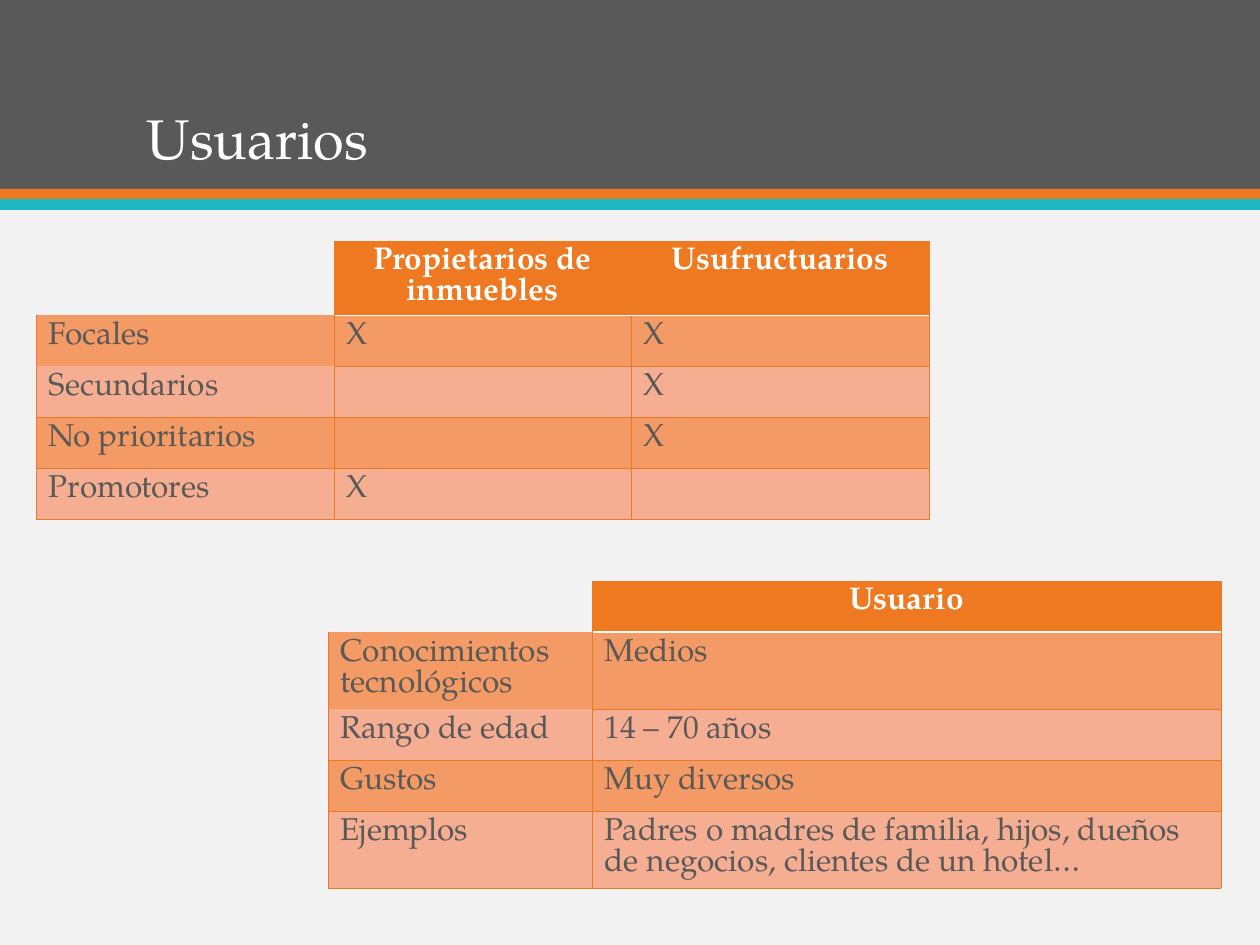
"""Build the "Usuarios" slide: a banded heading and two user tables."""
from lxml import etree
from pptx import Presentation
from pptx.dml.color import RGBColor
from pptx.enum.shapes import MSO_SHAPE
from pptx.enum.text import MSO_ANCHOR, MSO_AUTO_SIZE, PP_ALIGN
from pptx.oxml.ns import qn
from pptx.util import Emu, Pt

RECTANGLE = MSO_SHAPE.RECTANGLE
BOTTOM = MSO_ANCHOR.BOTTOM
NO_FIT = MSO_AUTO_SIZE.NONE
LEFT, CENTER = PP_ALIGN.LEFT, PP_ALIGN.CENTER

GRAY = RGBColor(0x59, 0x59, 0x59)
ORANGE = RGBColor(0xEF, 0x79, 0x20)
TEAL = RGBColor(0x1E, 0xB8, 0xC1)
PALE = RGBColor(0xF2, 0xF2, 0xF2)
WHITE = RGBColor(0xFF, 0xFF, 0xFF)
DARK_BAND = RGBColor(0xF4, 0x9A, 0x64)
LIGHT_BAND = RGBColor(0xF6, 0xAE, 0x92)

FONT = "TeX Gyre Pagella"
SCALE = 914400 / 126
PAGE_WIDTH, PAGE_HEIGHT = 1260, 945

TITLE = "Usuarios"
TITLE_BOX = (134, 35, 993, 143)
BARS = [(0, 189, GRAY), (189, 10, ORANGE), (199, 11, TEAL)]
TABLES = [
    {
        "origin": (328, 581),
        "columns": [264, 629],
        "rows": [51, 77, 51, 51, 77],
        "cells": [
            ["", "Usuario"],
            ["Conocimientos tecnológicos", "Medios"],
            ["Rango de edad", "14 – 70 años"],
            ["Gustos", "Muy diversos"],
            ["Ejemplos", "Padres o madres de familia, hijos, dueños de negocios, "
                         "clientes de un hotel…"],
        ],
    },
    {
        "origin": (36, 241),
        "columns": [298, 297, 298],
        "rows": [74, 51, 51, 51, 51],
        "cells": [
            ["", "Propietarios de inmuebles", "Usufructuarios"],
            ["Focales", "X", "X"],
            ["Secundarios", "", "X"],
            ["No prioritarios", "", "X"],
            ["Promotores", "X", ""],
        ],
    },
]


def px(length):
    return Emu(round(length * SCALE))


def write(frame, text, size=18, color=GRAY, bold=False, align=LEFT, spacing=None):
    para = frame.paragraphs[0]
    para.alignment = align
    para.line_spacing = spacing
    para.font.size = Pt(size)
    if text:
        span = para.add_run()
        span.text = text
        span.font.name = FONT
        span.font.size = Pt(size)
        span.font.bold = bold
        span.font.color.rgb = color


def set_borders(cell, borders):
    properties = cell._tc.get_or_add_tcPr()
    for position, side in enumerate("LRTB"):
        line = etree.Element(qn(f"a:ln{side}"))
        if side in borders:
            color, width = borders[side]
            line.set("w", str(Pt(width)))
            fill = etree.SubElement(line, qn("a:solidFill"))
            etree.SubElement(fill, qn("a:srgbClr")).set("val", str(color))
        else:
            line.set("w", "0")
            etree.SubElement(line, qn("a:noFill"))
        properties.insert(position, line)


def cell_borders(row, column):
    thin = (ORANGE, 0.5)
    if row == 0:
        return {"T": thin, "R": thin, "B": (WHITE, 1)} if column else {}
    borders = dict.fromkeys("LRTB", thin)
    if row == 1:
        borders["T"] = (WHITE, 1)
    if column == 0 and row == 1:
        del borders["T"], borders["B"]
    if column == 0 and row == 2:
        del borders["T"]
    return borders


def cell_fill(row, column):
    if row == 0:
        return ORANGE if column else PALE
    return DARK_BAND if row % 2 else LIGHT_BAND


def add_user_table(page, origin, columns, rows, cells):
    left, top = origin
    table = page.shapes.add_table(
        len(rows), len(columns), px(left), px(top), px(sum(columns)), px(sum(rows))
    ).table
    table.horz_banding = False
    table.first_row = False
    for column, width in enumerate(columns):
        table.columns[column].width = px(width)
    for row, height in enumerate(rows):
        table.rows[row].height = px(height)
        for column, text in enumerate(cells[row]):
            cell = table.cell(row, column)
            cell.fill.solid()
            cell.fill.fore_color.rgb = cell_fill(row, column)
            set_borders(cell, cell_borders(row, column))
            if row == 0:
                write(cell.text_frame, text, color=WHITE, bold=True, align=CENTER)
            else:
                write(cell.text_frame, text)


def add_bar(page, top, height, color):
    bar = page.shapes.add_shape(RECTANGLE, 0, px(top), px(PAGE_WIDTH), px(height))
    bar.shadow.inherit = False
    bar.fill.solid()
    bar.fill.fore_color.rgb = color
    bar.line.fill.background()
    return bar


def place_title(page, last_bar):
    title = page.shapes.title
    title.left, title.top, title.width, title.height = map(px, TITLE_BOX)
    title.text_frame.auto_size = NO_FIT
    title.text_frame.word_wrap = True
    title.text_frame.vertical_anchor = BOTTOM
    write(title.text_frame, TITLE, size=32, color=WHITE, spacing=0.9)
    last_bar.element.addnext(title.element)


def main():
    deck = Presentation()
    deck.slide_width, deck.slide_height = px(PAGE_WIDTH), px(PAGE_HEIGHT)
    page = deck.slides.add_slide(deck.slide_layouts[5])
    page.background.fill.solid()
    page.background.fill.fore_color.rgb = PALE
    bars = [add_bar(page, *bar) for bar in BARS]
    place_title(page, bars[-1])
    for table in TABLES:
        add_user_table(page, **table)
    deck.save("out.pptx")


if __name__ == "__main__":
    main()
